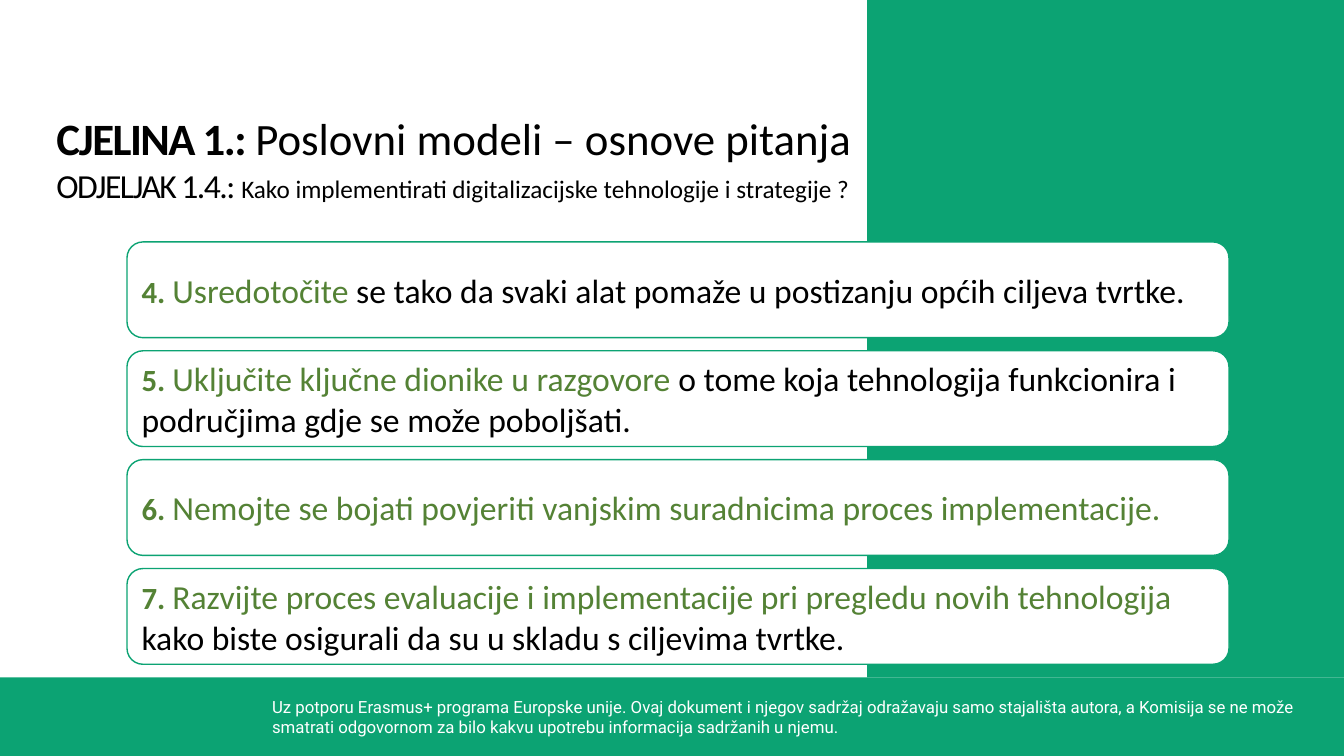
"""Build the slide on implementing digital technologies and strategies."""
from dataclasses import dataclass

from pptx import Presentation
from pptx.dml.color import RGBColor
from pptx.enum.shapes import MSO_SHAPE
from pptx.enum.text import MSO_ANCHOR, MSO_AUTO_SIZE, PP_ALIGN
from pptx.shapes.autoshape import Shape
from pptx.slide import Slide
from pptx.text.text import _Paragraph as Paragraph
from pptx.util import Inches, Pt


@dataclass(frozen=True)
class Theme:
    green: RGBColor = RGBColor(0x0C, 0xA3, 0x73)
    olive: RGBColor = RGBColor(0x54, 0x82, 0x35)
    black: RGBColor = RGBColor(0, 0, 0)
    white: RGBColor = RGBColor(0xFF, 0xFF, 0xFF)
    font: str = "Calibri"
    small: str = "Roboto"
    title: int = 32
    text: int = 24
    number: int = 22
    topic: int = 18
    note: int = 12


@dataclass(frozen=True)
class Box:
    left: float
    top: float
    width: float
    height: float


@dataclass(frozen=True)
class Heading:
    label: str
    text: str
    size: int
    rest: int
    bold: bool


@dataclass(frozen=True)
class Tip:
    number: int
    key: str
    rest: str = ""


THEME = Theme()
WIDTH, HEIGHT = 13.33, 7.5
BANDS = (Box(0, 6.72, WIDTH, 0.78), Box(8.6, 0, 4.73, 6.72))
HEADINGS = (
    Heading("CJELINA 1.: ", "Poslovni modeli – osnove pitanja",
            THEME.title, THEME.title, True),
    Heading("ODJELJAK 1.4.: ",
            "Kako implementirati digitalizacijske tehnologije i strategije ?",
            THEME.text, THEME.topic, False),
)
TIPS = (
    Tip(4, "Usredotočite ",
        "se tako da svaki alat pomaže u postizanju općih ciljeva tvrtke."),
    Tip(5, "Uključite ključne dionike u razgovore ",
        "o tome koja tehnologija funkcionira i područjima gdje se može poboljšati."),
    Tip(6, "Nemojte se bojati povjeriti vanjskim suradnicima proces implementacije."),
    Tip(7, "Razvijte proces evaluacije i implementacije pri pregledu novih tehnologija ",
        "kako biste osigurali da su u skladu s ciljevima tvrtke."),
)
NOTE = (
    "Uz potporu Erasmus+ programa Europske unije. Ovaj dokument i njegov sadržaj "
    "odražavaju samo stajališta autora, a Komisija se ne može smatrati odgovornom "
    "za bilo kakvu upotrebu informacija sadržanih u njemu."
)


def place(box: Box) -> tuple[Inches, Inches, Inches, Inches]:
    return Inches(box.left), Inches(box.top), Inches(box.width), Inches(box.height)


def add_run(para: Paragraph, text: str, size: int, color: RGBColor,
            bold: bool = False, tight: bool = False) -> None:
    run = para.add_run()
    run.text = text
    run.font.size = Pt(size)
    run.font.bold = bold
    run.font.color.rgb = color
    if tight:
        run.font._element.set("spc", "-110")


def add_panel(slide: Slide, kind: MSO_SHAPE, box: Box, fill: RGBColor) -> Shape:
    panel = slide.shapes.add_shape(kind, *place(box))
    panel.shadow.inherit = False
    panel.fill.solid()
    panel.fill.fore_color.rgb = fill
    panel.line.fill.background()
    return panel


def add_title(slide: Slide) -> None:
    title = slide.shapes.title
    title.left, title.top, title.width, title.height = place(Box(0.46, 1.05, 12.75, 1.1))
    frame = title.text_frame
    frame.word_wrap = True
    frame.auto_size = MSO_AUTO_SIZE.NONE
    frame.vertical_anchor = MSO_ANCHOR.TOP
    for i, head in enumerate(HEADINGS):
        para = frame.add_paragraph() if i else frame.paragraphs[0]
        para.alignment = PP_ALIGN.LEFT
        para.font.name = THEME.font
        add_run(para, head.label, head.size, THEME.black, head.bold, True)
        add_run(para, head.text, head.rest, THEME.black)


def add_note(slide: Slide) -> None:
    frame = slide.shapes.add_textbox(*place(Box(2.6, 6.86, 10.42, 0.5))).text_frame
    frame.word_wrap = True
    para = frame.paragraphs[0]
    para.font.name = THEME.small
    add_run(para, NOTE, THEME.note, THEME.white)


def add_tip(slide: Slide, tip: Tip, top: float) -> None:
    card = add_panel(slide, MSO_SHAPE.ROUNDED_RECTANGLE,
                     Box(1.26, top, 10.93, 0.95), THEME.white)
    card.line.color.rgb = THEME.green
    card.line.width = Pt(1)
    frame = card.text_frame
    frame.word_wrap = True
    frame.vertical_anchor = MSO_ANCHOR.MIDDLE
    para = frame.paragraphs[0]
    para.alignment = PP_ALIGN.LEFT
    para.font.name = THEME.font
    add_run(para, f"{tip.number}. ", THEME.number, THEME.olive, True)
    add_run(para, tip.key, THEME.text, THEME.olive)
    if tip.rest:
        add_run(para, tip.rest, THEME.text, THEME.black)


def main() -> None:
    deck = Presentation()
    deck.slide_width, deck.slide_height = Inches(WIDTH), Inches(HEIGHT)
    slide = deck.slides.add_slide(deck.slide_layouts[5])
    for band in BANDS:
        add_panel(slide, MSO_SHAPE.RECTANGLE, band, THEME.green)
    add_title(slide)
    add_note(slide)
    for i, tip in enumerate(TIPS):
        add_tip(slide, tip, 2.4 + i * 1.08)
    deck.save("out.pptx")


if __name__ == "__main__":
    main()
